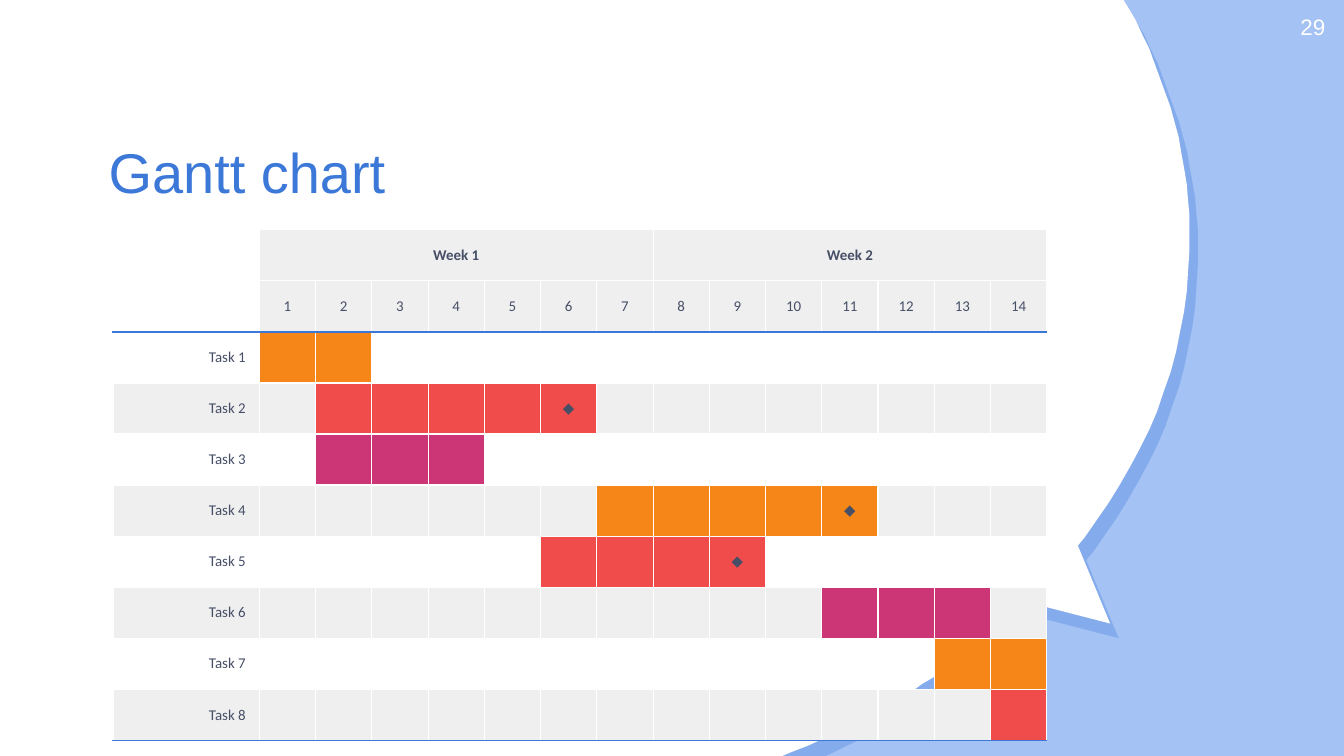
"""Build a two-week Gantt chart slide over a speech-bubble background."""
from lxml import etree
from pptx import Presentation
from pptx import util as u
from pptx.dml.color import RGBColor
from pptx.enum import text
from pptx.oxml.ns import qn

COLORS = {
    "sky": "A4C2F4", "blue": "3C78D8", "white": "FFFFFF", "gray": "EFEFEF",
    "slate": "474F67", "orange": "F58617", "red": "F14C4C", "pink": "CD3676",
}
TITLE = "Gantt chart"
PAGE_NUMBER = "29"
DAYS_PER_WEEK = 7
WEEKS = ["Week 1", "Week 2"]
MILESTONE = "◆"
TASKS = [
    ("Task 1", 1, 2, "orange", None),
    ("Task 2", 2, 6, "red", 6),
    ("Task 3", 2, 4, "pink", None),
    ("Task 4", 7, 11, "orange", 11),
    ("Task 5", 6, 9, "red", 9),
    ("Task 6", 11, 13, "pink", None),
    ("Task 7", 13, 14, "orange", None),
    ("Task 8", 14, 14, "red", None),
]
SLIDE_WIDTH = 10
SLIDE_HEIGHT = SLIDE_WIDTH * 9 / 16
DAY_COUNT = DAYS_PER_WEEK * len(WEEKS)
HEADER_ROWS = 2
ROW_COUNT = HEADER_ROWS + len(TASKS)
TABLE_LEFT, TABLE_TOP, TABLE_WIDTH = 0.84, 1.71, 6.95
LABEL_WIDTH, ROW_HEIGHT = 1.09, 0.38
DAY_WIDTH = (TABLE_WIDTH - LABEL_WIDTH) / DAY_COUNT

BUBBLE = [
    (0, 0), (8.36, 0), (8.39, 0.05), (8.45, 0.15), (8.5, 0.26), (8.55, 0.36),
    (8.59, 0.47), (8.63, 0.58), (8.67, 0.69), (8.71, 0.8), (8.74, 0.91),
    (8.77, 1.02), (8.79, 1.14), (8.81, 1.25), (8.83, 1.37), (8.84, 1.49),
    (8.85, 1.6), (8.85, 1.86), (8.84, 2.02), (8.83, 2.17), (8.81, 2.32),
    (8.78, 2.47), (8.75, 2.62), (8.71, 2.77), (8.66, 2.91), (8.61, 3.06),
    (8.55, 3.2), (8.48, 3.34), (8.41, 3.47), (8.33, 3.61), (8.25, 3.74),
    (8.16, 3.87), (8.07, 4), (8.02, 4.06), (8.26, 4.64), (7.64, 4.48),
    (7.5, 4.61), (7.4, 4.7), (7.3, 4.78), (7.19, 4.86), (7.09, 4.94),
    (6.98, 5.02), (6.86, 5.09), (6.75, 5.17), (6.63, 5.24), (6.51, 5.3),
    (6.39, 5.37), (6.26, 5.43), (6.14, 5.49), (6.01, 5.55), (5.88, 5.6),
    (5.81, 5.63), (0, 5.63),
]


def rgb(name):
    return RGBColor.from_string(COLORS[name])


def style_paragraph(paragraph, font_name, size, color, align, bold=False):
    paragraph.alignment = align
    font = paragraph.font
    font.name, font.size, font.bold = font_name, u.Pt(size), bold
    font.color.rgb = rgb(color)


def add_text(slide, box, content, size, color, anchor, align):
    shape = slide.shapes.add_textbox(*map(u.Inches, box))
    frame = shape.text_frame
    frame.word_wrap = True
    frame.vertical_anchor = anchor
    frame.margin_left = frame.margin_right = u.Inches(0.1)
    frame.margin_top = frame.margin_bottom = u.Inches(0.1)
    frame.text = content
    style_paragraph(frame.paragraphs[0], "Arial", size, color, align)


def add_bubble(slide):
    points = [(u.Inches(x), u.Inches(y)) for x, y in BUBBLE]
    builder = slide.shapes.build_freeform(*points[0])
    builder.add_line_segments(points[1:], close=True)
    shape = builder.convert_to_shape()
    shape.fill.solid()
    shape.fill.fore_color.rgb = rgb("white")
    shape.line.fill.background()
    shape.shadow.inherit = False
    effects = shape._element.spPr.find(qn("a:effectLst"))
    shadow = etree.SubElement(effects, qn("a:outerShdw"), blurRad="0", dist=str(u.Pt(9)),
                              dir=str(60 * 60000), algn="bl", rotWithShape="0")
    color = etree.SubElement(shadow, qn("a:srgbClr"), val=COLORS["blue"])
    etree.SubElement(color, qn("a:alpha"), val="30000")


def set_borders(cell, row):
    top = "blue" if row == HEADER_ROWS else "white"
    bottom = "blue" if row in (HEADER_ROWS - 1, ROW_COUNT - 1) else "white"
    sides = [("lnL", "white"), ("lnR", "white"), ("lnT", top), ("lnB", bottom)]
    properties = cell._tc.get_or_add_tcPr()
    for index, (side, color) in enumerate(sides):
        line = etree.Element(qn(f"a:{side}"), w=str(u.Pt(0.75)))
        fill = etree.SubElement(line, qn("a:solidFill"))
        etree.SubElement(fill, qn("a:srgbClr"), val=COLORS[color])
        properties.insert(index, line)


def cell_content(row, column):
    """Return the wording and fill colour of one cell."""
    if row < HEADER_ROWS:
        if column == 0:
            return "", None
        if row == 1:
            return str(column), "gray"
        week, day = divmod(column - 1, DAYS_PER_WEEK)
        return (WEEKS[week] if day == 0 else ""), "gray"
    label, start, end, color, milestone = TASKS[row - HEADER_ROWS]
    band = "gray" if row % 2 else None
    if column == 0:
        return label, band
    return (MILESTONE if column == milestone else ""), (color if start <= column <= end else band)


def add_gantt(slide):
    box = (TABLE_LEFT, TABLE_TOP, TABLE_WIDTH, ROW_COUNT * ROW_HEIGHT)
    table = slide.shapes.add_table(ROW_COUNT, DAY_COUNT + 1, *map(u.Inches, box)).table
    table.first_row = table.horz_banding = False
    for index, column in enumerate(table.columns):
        column.width = u.Inches(DAY_WIDTH if index else LABEL_WIDTH)
    for row_index, row in enumerate(table.rows):
        row.height = u.Inches(ROW_HEIGHT)
        for column_index, cell in enumerate(row.cells):
            content, color = cell_content(row_index, column_index)
            cell.text = content
            cell.vertical_anchor = text.MSO_ANCHOR.MIDDLE
            align = text.PP_ALIGN.CENTER if column_index else text.PP_ALIGN.RIGHT
            style_paragraph(cell.text_frame.paragraphs[0], "Calibri", 8, "slate", align,
                            bold=row_index == 0)
            if color:
                cell.fill.solid()
                cell.fill.fore_color.rgb = rgb(color)
            else:
                cell.fill.background()
            set_borders(cell, row_index)
    for first in range(1, DAY_COUNT, DAYS_PER_WEEK):
        table.cell(0, first).merge(table.cell(0, first + DAYS_PER_WEEK - 1))


def main():
    presentation = Presentation()
    presentation.slide_width = u.Inches(SLIDE_WIDTH)
    presentation.slide_height = u.Inches(SLIDE_HEIGHT)
    slide = presentation.slides.add_slide(presentation.slide_layouts[6])
    slide.background.fill.solid()
    slide.background.fill.fore_color.rgb = rgb("sky")
    add_bubble(slide)
    add_text(slide, (0.71, 0.81, 6.53, 0.81), TITLE, 30, "blue",
             text.MSO_ANCHOR.BOTTOM, text.PP_ALIGN.LEFT)
    add_text(slide, (9.36, 0, 0.6, 0.43), PAGE_NUMBER, 12, "white",
             text.MSO_ANCHOR.TOP, text.PP_ALIGN.RIGHT)
    add_gantt(slide)
    presentation.save("out.pptx")


if __name__ == "__main__":
    main()
